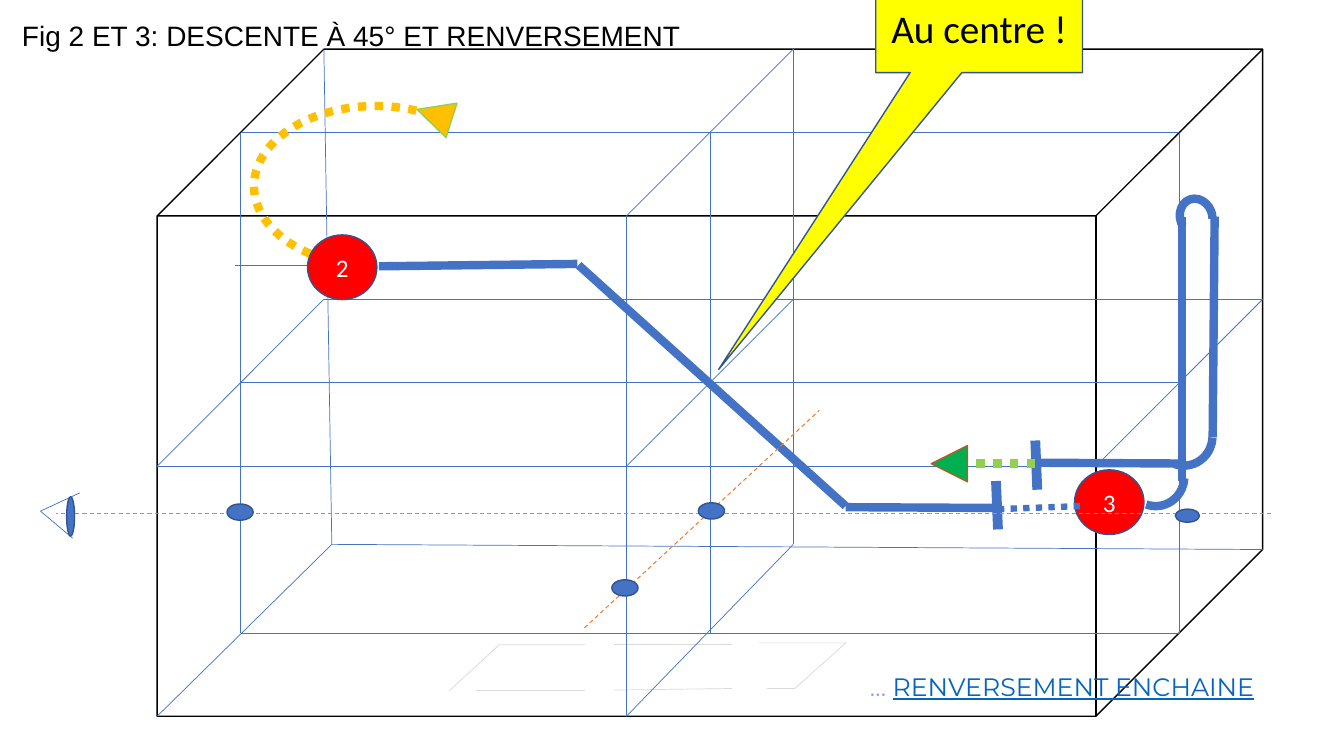
"""Draws the flight box with figures 2 and 3: 45° descent and stall turn."""
from dataclasses import dataclass

from lxml.etree import SubElement
from pptx import Presentation
from pptx.dml.color import RGBColor
from pptx.enum.dml import MSO_LINE_DASH_STYLE as Dash
from pptx.enum.shapes import MSO_CONNECTOR, MSO_SHAPE as Kind
from pptx.enum.text import MSO_ANCHOR, PP_ALIGN
from pptx.oxml.ns import qn
from pptx.util import Cm, Pt


@dataclass(frozen=True)
class Theme:
    black: str = "000000"
    white: str = "FFFFFF"
    blue: str = "4472C4"
    outline: str = "325491"
    red: str = "FF0000"
    yellow: str = "FFFF00"
    amber: str = "FFC000"
    lime: str = "92D050"
    green: str = "00B050"
    rust: str = "AF5C24"
    orange: str = "ED7D31"
    pale: str = "8FAADC"
    link: str = "0563C1"
    grey: str = "D9D9D9"
    title_font: str = "Arial"
    label_font: str = "Calibri"
    link_font: str = "Montserrat"
    title_size: int = 20
    label_size: int = 18
    callout_size: int = 28
    hair: float = 0.5
    thin: float = 0.75
    edge: float = 1
    dotted: float = 4.5
    track: float = 6
    tick: float = 7


THEME = Theme()

TITLE = "Fig 2 ET 3: DESCENTE À 45° ET RENVERSEMENT"
CALLOUT = "Au centre !"
LINK = (("… ", THEME.pale, False), ("RENVERSEMENT ENCHAINE", THEME.link, True))

CUBE = (3.96, 1.24, 27.86, 16.81)
ACROSS = ((0.5, 1), (0.5, 0), (0.5, 0.5), (0, 0.5), (1, 0.5), (1, 1))
DOWN = ((0, 1), (0.5, 0), (0.5, 1), (0, 0.5), (0.5, 0.5), (1, 0.5))
INWARD = ((0, 1), (0.5, 0), (0.5, 1), (1, 0.5), (0, 0.5), (0.5, 0.5))
FOOT_SHIFTS = {(0, 1, 1): (0.2, -0.13), (0.5, 1, 1): (0, -0.13)}

GROUND = (
    ((11.32, 17.41), (12.58, 16.25), (14.74, 16.25)),
    ((15.47, 16.23), (18.45, 16.23)),
    ((19.13, 16.2), (21.32, 16.2), (20.03, 17.35), (19.33, 17.35)),
    ((18.45, 17.35), (15.47, 17.39)),
    ((14.74, 17.39), (12, 17.39)),
)
DESCENT = ((9.55, 6.71, 14.55, 6.65), (14.58, 6.68, 21.31, 12.75))
LEVEL_EXIT = (21.31, 12.78, 25.22, 12.8)
ENTRY_GUIDE = (9.5, 6.68, 5.92, 6.68)
STALL_TURN = (
    (29.79, 12.12, 29.79, 5.46),
    (30.56, 11.02, 30.61, 5.46),
    (26.14, 11.66, 29.79, 11.68),
)
TICKS = ((25.1, 12.12, 25.15, 13.34), (26.09, 11.1, 26.14, 12.34))
AXES = ((32.03, 12.93, 1.4, 12.93), (14.73, 15.82, 20.65, 10.34))
DOTTED_LINK = (25.15, 12.83, 27.28, 12.75)
EXIT_DOTS = (26.09, 11.68, 24.38, 11.68)
EYE_LINES = ((1.02, 12.88, 2.01, 12.42), (1.02, 12.88, 1.83, 13.56))

ENTRY_TURN = ((6.4, 2.67, 6.12, 4.04), 180, (188.39, 78.65))
STALL_ARCS = (
    ((29.74, 5, 0.81, 0.94), 340.5, (99.59, 15.23)),
    ((28.37, 11.28, 1.5, 1.45), 85.4, (166.92, 13.8)),
    ((29.08, 10.26, 1.5, 1.45), 85.4, (166.92, 13.8)),
)
BALLS = (("2", 7.75, 5.92), ("3", 27.08, 11.84))
OVALS = (
    (5.72, 12.7, 0.66, 0.41), (17.6, 12.67, 0.66, 0.41),
    (29.62, 12.83, 0.61, 0.33), (15.42, 14.61, 0.66, 0.41),
    (1.68, 12.52, 0.2, 0.99),
)
ARROWS = (
    ((23.47, 11.23, 0.91, 0.91), 270, THEME.green, THEME.rust),
    ((10.49, 2.44, 0.91, 0.91), 287.7, THEME.amber, THEME.lime),
)


def style_line(line, color, width, dash=None):
    line.color.rgb = RGBColor.from_string(color)
    line.width = Pt(width)
    if dash is not None:
        line.dash_style = dash


def style_font(font, name, size, color):
    font.name, font.size = name, Pt(size)
    font.color.rgb = RGBColor.from_string(color)


def add_line(page, ends, color, width, dash=None):
    line = page.shapes.add_connector(MSO_CONNECTOR.STRAIGHT, *map(Cm, ends))
    style_line(line.line, color, width, dash)
    SubElement(line._element.spPr, qn("a:effectLst"))


def finish(shape, fill, color, width, dash=None):
    shape.shadow.inherit = False
    if fill:
        shape.fill.solid()
        shape.fill.fore_color.rgb = RGBColor.from_string(fill)
    else:
        shape.fill.background()
    style_line(shape.line, color, width, dash)


def add_box(page, kind, frame, fill, color=THEME.outline, width=THEME.edge, dash=None, turn=0, bends=()):
    box = page.shapes.add_shape(kind, *map(Cm, frame))
    for index, bend in enumerate(bends):
        box.adjustments[index] = bend
    box.rotation = turn
    finish(box, fill, color, width, dash)
    return box


def add_label(box, words, size, color):
    box.text_frame.vertical_anchor = MSO_ANCHOR.MIDDLE
    para = box.text_frame.paragraphs[0]
    para.text, para.alignment = words, PP_ALIGN.CENTER
    style_font(para.font, THEME.label_font, size, color)


def cube_point(u, v, w):
    left, top, width, height = CUBE
    depth = height / 4
    shift_x, shift_y = FOOT_SHIFTS.get((u, v, w), (0, 0))
    return (left + u * (width - depth) + w * depth + shift_x,
            top + depth + v * (height - depth) - w * depth + shift_y)


def draw_flight_box(page):
    for points in GROUND:
        start, *others = [(Cm(x), Cm(y)) for x, y in points]
        outline = page.shapes.build_freeform(*start)
        outline.add_line_segments(others, close=False)
        finish(outline.convert_to_shape(), None, THEME.grey, THEME.hair)
    add_box(page, Kind.CUBE, CUBE, None, THEME.black)
    edges = [((0, v, w), (1, v, w)) for v, w in ACROSS]
    edges += [((u, 0, w), (u, 1, w)) for u, w in DOWN]
    edges += [((u, v, 0), (u, v, 1)) for u, v in INWARD]
    for start, end in edges:
        add_line(page, cube_point(*start) + cube_point(*end), THEME.blue, THEME.hair)


def draw_flight(page):
    frame, turn, bends = ENTRY_TURN
    add_box(page, Kind.ARC, frame, None, THEME.amber, THEME.track, Dash.ROUND_DOT, turn, bends)
    for ends in DESCENT:
        add_line(page, ends, THEME.blue, THEME.track)
    add_line(page, ENTRY_GUIDE, THEME.blue, THEME.hair)
    for number, left, top in BALLS:
        ball = add_box(page, Kind.OVAL, (left, top, 1.75, 1.63), THEME.red)
        add_label(ball, number, THEME.label_size, THEME.white)
    for frame, turn, bends in STALL_ARCS:
        add_box(page, Kind.ARC, frame, None, THEME.blue, THEME.track, turn=turn, bends=bends)
    for ends in (*STALL_TURN, LEVEL_EXIT):
        add_line(page, ends, THEME.blue, THEME.track)
    for ends in TICKS:
        add_line(page, ends, THEME.blue, THEME.tick)
    callout = add_box(page, Kind.RECTANGULAR_CALLOUT, (22.07, -0.41, 5.21, 2.24), THEME.yellow, bends=(-1.26, 3.84))
    add_label(callout, CALLOUT, THEME.callout_size, THEME.black)


def draw_marks(page):
    for ends in AXES:
        add_line(page, ends, THEME.orange, THEME.thin, Dash.DASH)
    add_line(page, DOTTED_LINK, THEME.blue, THEME.dotted, Dash.ROUND_DOT)
    for ends in EYE_LINES:
        add_line(page, ends, THEME.blue, THEME.hair)
    for frame in OVALS:
        add_box(page, Kind.OVAL, frame, THEME.blue)
    add_line(page, EXIT_DOTS, THEME.lime, THEME.track, Dash.ROUND_DOT)
    for frame, turn, fill, color in ARROWS:
        add_box(page, Kind.ISOSCELES_TRIANGLE, frame, fill, color, turn=turn)


def write_texts(page):
    box = page.shapes.add_textbox(*map(Cm, (21.67, 16.79, 11.3, 1.02)))
    box.text_frame.word_wrap = False
    for words, color, underlined in LINK:
        span = box.text_frame.paragraphs[0].add_run()
        span.text, span.font.underline = words, underlined
        style_font(span.font, THEME.link_font, THEME.label_size, color)
    title = page.shapes.title
    title.left, title.top, title.width, title.height = map(Cm, (0.3, 0.33, 29.21, 1.24))
    title.text_frame.vertical_anchor = MSO_ANCHOR.MIDDLE
    para = title.text_frame.paragraphs[0]
    para.text, para.alignment, para.line_spacing = TITLE, PP_ALIGN.LEFT, 0.9
    style_font(para.font, THEME.title_font, THEME.title_size, THEME.black)


def main():
    deck = Presentation()
    deck.slide_width, deck.slide_height = Cm(33.87), Cm(19.05)
    page = deck.slides.add_slide(deck.slide_layouts[5])
    draw_flight_box(page)
    draw_flight(page)
    draw_marks(page)
    write_texts(page)
    deck.save("out.pptx")


if __name__ == "__main__":
    main()
